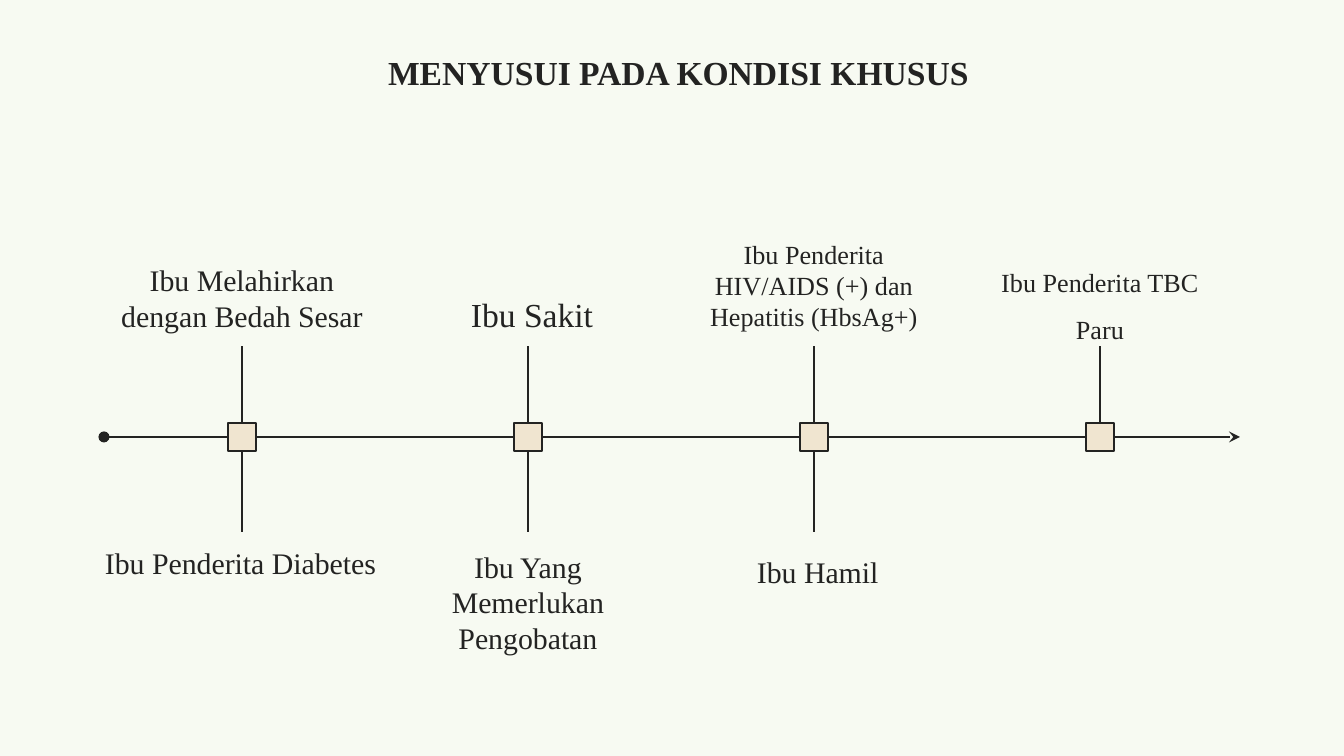
from dataclasses import dataclass
from itertools import pairwise
from typing import Optional

from lxml.etree import SubElement
from pptx import Presentation
from pptx.dml.color import RGBColor
from pptx.enum.shapes import MSO_CONNECTOR, MSO_SHAPE
from pptx.enum.text import MSO_ANCHOR, MSO_AUTO_SIZE, PP_ALIGN
from pptx.oxml.ns import qn
from pptx.util import Emu, Pt

INK = RGBColor(0x23, 0x23, 0x22)
SAND = RGBColor(0xF0, 0xE5, 0xD0)
PAPER = RGBColor(0xF7, 0xFA, 0xF2)
FONT = "Times New Roman"

# Timeline grid, in px
SLIDE_W, SLIDE_H = 1344, 756
FIRST_X, STEP = 242, 286
AXIS_Y, AXIS_LEFT, AXIS_RIGHT = 437, 104, 1240
MARK = 28
LABEL_W = 274
STEM_TOP, STEM_BOTTOM = 346, 532
INSET, INDENT = 13, 67
TOP, LEFT, BOTTOM, RIGHT = range(4)


def px(n: float) -> Emu:
    return Emu(round(n * 914400 * 10 / SLIDE_W))


@dataclass
class Label:
    text: str
    y: int
    h: int
    size: int = 16
    align: PP_ALIGN = PP_ALIGN.CENTER
    inset: int = INSET
    indent: int = 0
    spacing: float = 1.0
    after: int = 0


@dataclass
class Stage:
    above: Label
    below: Optional[Label] = None


STAGES = [
    Stage(Label("Ibu Melahirkan dengan Bedah Sesar", 251, 94, inset=0),
          Label("Ibu Penderita Diabetes", 532, 62, align=PP_ALIGN.JUSTIFY, inset=0)),
    Stage(Label("Ibu Sakit", 263, 83, size=18, align=PP_ALIGN.JUSTIFY,
                indent=INDENT, spacing=1.5, after=10),
          Label("Ibu Yang Memerlukan Pengobatan", 532, 140)),
    Stage(Label("Ibu Penderita HIV/AIDS (+) dan Hepatitis (HbsAg+)", 224, 122, size=14),
          Label("Ibu Hamil", 532, 62, align=PP_ALIGN.JUSTIFY,
                indent=INDENT, spacing=1.5, after=10)),
    Stage(Label("Ibu Penderita TBC Paru", 251, 94, size=14, spacing=1.5, after=10)),
]


def write(sp, text: str, *, size: int, bold: bool = False, align=PP_ALIGN.CENTER,
          inset: int = INSET, indent: int = 0, spacing: float = 1.0, after: int = 0) -> None:
    tf = sp.text_frame
    tf.word_wrap = True
    tf.auto_size = MSO_AUTO_SIZE.NONE
    tf.vertical_anchor = MSO_ANCHOR.MIDDLE
    tf.margin_left = tf.margin_right = px(inset)
    tf.margin_top = tf.margin_bottom = px(INSET)
    p = tf.paragraphs[0]
    p.alignment, p.line_spacing, p.space_after = align, spacing, Pt(after)
    if indent:
        p._p.get_or_add_pPr().set("marL", str(px(indent)))
    r = p.add_run()
    r.text = text
    r.font.name, r.font.size, r.font.bold = FONT, Pt(size), bold
    r.font.color.rgb = INK


def add_label(s, label: Label, center: int) -> None:
    sp = s.shapes.add_textbox(px(center - LABEL_W / 2), px(label.y), px(LABEL_W), px(label.h))
    write(sp, label.text, size=label.size, align=label.align, inset=label.inset,
          indent=label.indent, spacing=label.spacing, after=label.after)


def add_marker(s, center: int):
    sp = s.shapes.add_shape(MSO_SHAPE.RECTANGLE, px(center - MARK / 2),
                            px(AXIS_Y - MARK / 2), px(MARK), px(MARK))
    sp.shadow.inherit = False
    sp.fill.solid()
    sp.fill.fore_color.rgb = SAND
    sp.line.color.rgb = INK
    sp.line.width = Pt(0.75)
    return sp


def add_line(s, marker, side: int, x: int, y: int, *, end_marker=None, tail: str = ""):
    """Draw from one side of a marker to a point or to the next marker."""
    line = s.shapes.add_connector(MSO_CONNECTOR.STRAIGHT, 0, 0, px(x), px(y))
    line.begin_connect(marker, side)
    if end_marker is not None:
        line.end_connect(end_marker, LEFT)
    line.line.color.rgb = INK
    line.line.width = Pt(0.75)
    if tail:
        SubElement(line.line._get_or_add_ln(), qn("a:tailEnd"), type=tail)
    SubElement(line._element.spPr, qn("a:effectLst"))


def main() -> None:
    prs = Presentation()
    prs.slide_width, prs.slide_height = px(SLIDE_W), px(SLIDE_H)
    s = prs.slides.add_slide(prs.slide_layouts[5])
    s.background.fill.solid()
    s.background.fill.fore_color.rgb = PAPER

    # Title
    title = s.shapes.title
    title.left, title.top, title.width, title.height = px(112), px(28), px(1133), px(83)
    write(title, "MENYUSUI PADA KONDISI KHUSUS", size=18, bold=True, spacing=1.15, after=10)

    # Markers and the axis through them
    centers = [FIRST_X + i * STEP for i in range(len(STAGES))]
    markers = [add_marker(s, x) for x in centers]
    for a, b in pairwise(markers):
        add_line(s, a, RIGHT, 0, AXIS_Y, end_marker=b)
    add_line(s, markers[0], LEFT, AXIS_LEFT, AXIS_Y, tail="oval")
    add_line(s, markers[-1], RIGHT, AXIS_RIGHT, AXIS_Y, tail="stealth")

    # Stems and labels
    for stage, marker, x in zip(STAGES, markers, centers):
        add_line(s, marker, TOP, x, STEM_TOP)
        add_label(s, stage.above, x)
        if stage.below:
            add_line(s, marker, BOTTOM, x, STEM_BOTTOM)
            add_label(s, stage.below, x)

    prs.save("out.pptx")


if __name__ == "__main__":
    main()
